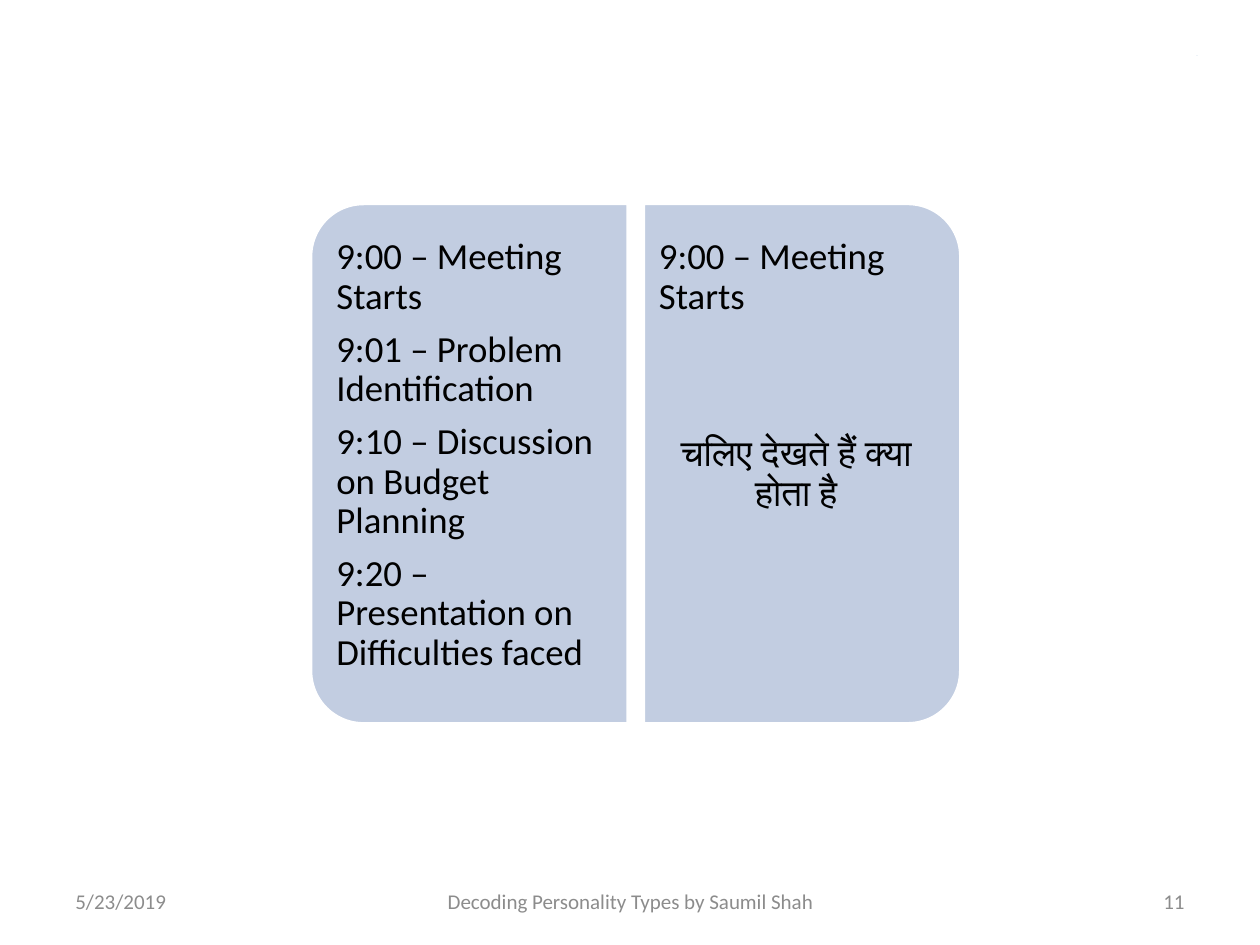
from pptx import Presentation
from pptx.dml.color import RGBColor
from pptx.enum.shapes import MSO_SHAPE as Shape
from pptx.enum.text import MSO_ANCHOR as Anchor, PP_ALIGN as Align
from pptx.util import Inches, Pt

FONT = "Calibri"
BLANK_LAYOUT = 6
PANEL_FILL, ARROW_FILL, WHITE, BLACK, GRAY = (
    "C2CDE1", "4F81BD", "FFFFFF", "000000", "8C8C8C")

# Panels: (left, rotation, text left, left inset, right inset, paragraphs)
# Paragraphs: (text, alignment, space before in points)
PANELS = [
    (1.66, 270, 2.58, 0.09, 0.13, [
        ("9:00 – Meeting Starts", Align.LEFT, 0),
        ("9:01 – Problem Identification", Align.LEFT, 0),
        ("9:10 – Discussion on Budget Planning", Align.LEFT, 0),
        ("9:20 – Presentation on Difficulties faced", Align.LEFT, 0),
    ]),
    (4.3, 90, 5.1, 0.13, 0.09, [
        ("9:00 – Meeting Starts", Align.LEFT, 0),
        ("चलिए देखते हैं क्या होता है", Align.CENTER, 59.6),
    ]),
]
PANEL_LENGTH, PANEL_WIDTH, PANEL_MIDDLE = 4.13, 2.52, 3.68
PANEL_CORNERS = (0.167, 0)
TEXT_WIDTH, TEXT_HEIGHT = 2.4, 3.88

# Small arrows: (box, rotation)
ARROWS = [((9.3, 0.14, 0.23, 0.56), 0), ((9.3, 6.78, 0.24, 0.1), 180)]
ARROW_ADJUSTMENTS = (0.125, 11.42, 204.58, 108, 0.125)

# Footer: (left, width, text, alignment)
FOOTER = [
    (7.17, 2.33, "11", Align.RIGHT),
    (3.42, 3.17, "Decoding Personality Types by Saumil Shah", Align.CENTER),
    (0.5, 2.33, "5/23/2019", Align.LEFT),
]
FOOTER_TOP, FOOTER_HEIGHT = 6.95, 0.4


def color(value):
    return RGBColor.from_string(value)


def add_shape(slide, kind, box, rotation, adjustments, fill):
    shape = slide.shapes.add_shape(kind, *map(Inches, box))
    shape.rotation = rotation
    for index, value in enumerate(adjustments):
        shape.adjustments[index] = value
    shape.shadow.inherit = False
    shape.fill.solid()
    shape.fill.fore_color.rgb = color(fill)
    shape.line.color.rgb = color(WHITE)
    shape.line.width = Pt(2)
    return shape


def add_text(slide, box, insets, paragraphs, size, fill, anchor,
             line_spacing=1.0, space_after=0):
    frame = slide.shapes.add_textbox(*map(Inches, box)).text_frame
    frame.word_wrap = True
    frame.vertical_anchor = anchor
    (frame.margin_left, frame.margin_top,
     frame.margin_right, frame.margin_bottom) = map(Inches, insets)
    for index, (text, alignment, space_before) in enumerate(paragraphs):
        paragraph = frame.add_paragraph() if index else frame.paragraphs[0]
        paragraph.alignment = alignment
        paragraph.line_spacing = line_spacing
        paragraph.space_before = Pt(space_before)
        paragraph.space_after = Pt(space_after)
        run = paragraph.add_run()
        run.text = text
        run.font.name = FONT
        run.font.size = Pt(size)
        run.font.color.rgb = color(fill)


def main():
    presentation = Presentation()
    presentation.slide_width, presentation.slide_height = Inches(10), Inches(7.5)
    slide = presentation.slides.add_slide(presentation.slide_layouts[BLANK_LAYOUT])

    for left, rotation, text_left, inset_left, inset_right, paragraphs in PANELS:
        panel_box = (left, PANEL_MIDDLE - PANEL_WIDTH / 2, PANEL_LENGTH, PANEL_WIDTH)
        add_shape(slide, Shape.ROUND_2_SAME_RECTANGLE, panel_box, rotation,
                  PANEL_CORNERS, PANEL_FILL)
        text_box = (text_left, PANEL_MIDDLE - TEXT_HEIGHT / 2, TEXT_WIDTH, TEXT_HEIGHT)
        add_text(slide, text_box, (inset_left, 0.15, inset_right, 0.15), paragraphs,
                 21, BLACK, Anchor.TOP, line_spacing=0.9, space_after=7.35)

    for box, rotation in ARROWS:
        arrow = add_shape(slide, Shape.CIRCULAR_ARROW, box, rotation,
                          ARROW_ADJUSTMENTS, ARROW_FILL)
        arrow.element.spPr.xfrm.set("flipV", "1")

    for left, width, text, alignment in FOOTER:
        add_text(slide, (left, FOOTER_TOP, width, FOOTER_HEIGHT),
                 (0.1, 0.05, 0.1, 0.05), [(text, alignment, 0)],
                 12, GRAY, Anchor.MIDDLE)

    presentation.save("out.pptx")


if __name__ == "__main__":
    main()
